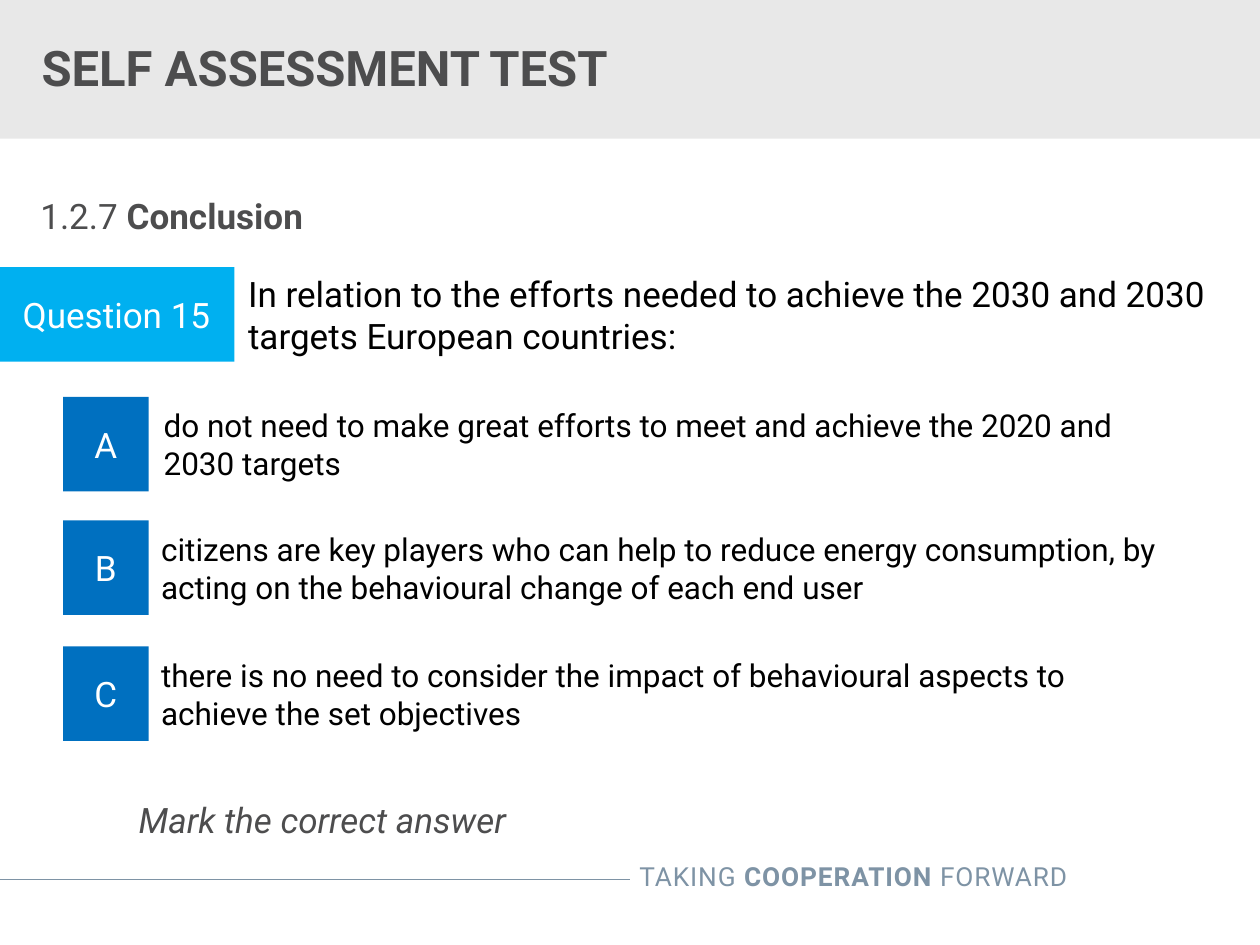
from dataclasses import dataclass

from lxml import etree
from pptx import Presentation
from pptx.dml.color import RGBColor
from pptx.enum.shapes import MSO_CONNECTOR, MSO_SHAPE
from pptx.enum.text import MSO_ANCHOR, MSO_AUTO_SIZE, PP_ALIGN
from pptx.oxml.ns import qn
from pptx.util import Inches, Pt

RECTANGLE = MSO_SHAPE.RECTANGLE
STRAIGHT = MSO_CONNECTOR.STRAIGHT
TOP, MIDDLE = MSO_ANCHOR.TOP, MSO_ANCHOR.MIDDLE
NO_AUTOSIZE = MSO_AUTO_SIZE.NONE
LEFT, CENTER, RIGHT = PP_ALIGN.LEFT, PP_ALIGN.CENTER, PP_ALIGN.RIGHT


@dataclass(frozen=True)
class Theme:
    font: str = "Roboto"
    heading: str = "4D4D4E"
    body: str = "000000"
    on_fill: str = "FFFFFF"
    band: str = "E8E8E8"
    question: str = "00B0F0"
    answer: str = "0070C0"
    slogan: str = "7E93A5"
    title_size: float = 28
    text_size: float = 20
    answer_size: float = 18
    slogan_size: float = 15


@dataclass(frozen=True)
class Box:
    left: float
    top: float
    width: float
    height: float

    def lengths(self) -> tuple:
        return tuple(map(Inches, (self.left, self.top, self.width, self.height)))


@dataclass(frozen=True)
class Run:
    text: str
    bold: bool = False
    italic: bool = False


@dataclass(frozen=True)
class Answer:
    letter: str
    text: str
    top: float
    text_left: float = 1.18


THEME = Theme()
ROW_HEIGHT = 0.75
ANSWERS = (
    Answer("A", "do not need to make great efforts to meet and achieve "
           "the 2020 and 2030 targets", 3.15, 1.2),
    Answer("B", "citizens are key players who can help to reduce energy consumption, "
           "by acting on the behavioural change of each end user", 4.13),
    Answer("C", "there is no need to consider the impact of behavioural aspects "
           "to achieve the set objectives", 5.13),
)


def write(shape, *runs: Run, size: float = THEME.text_size, color: str = THEME.body,
          align=LEFT, anchor=MIDDLE, inset: float | None = None,
          tracking: int | None = None) -> None:
    frame = shape.text_frame
    frame.word_wrap = True
    frame.auto_size = NO_AUTOSIZE
    frame.vertical_anchor = anchor
    if inset is not None:
        frame.margin_left = frame.margin_right = Inches(inset)
        frame.margin_top = frame.margin_bottom = Inches(inset)
    paragraph = frame.paragraphs[0]
    paragraph.alignment = align
    for part in runs:
        run = paragraph.add_run()
        run.text = part.text
        font = run.font
        font.name, font.size = THEME.font, Pt(size)
        font.bold, font.italic = part.bold, part.italic
        font.color.rgb = RGBColor.from_string(color)
        if tracking is not None:
            font._element.set("spc", str(tracking))


def place(placeholder, box: Box, indent: float) -> None:
    placeholder.left, placeholder.top, placeholder.width, placeholder.height = box.lengths()
    properties = placeholder.text_frame.paragraphs[0]._p.get_or_add_pPr()
    properties.set("marL", str(Inches(indent)))
    properties.set("indent", "0")
    etree.SubElement(properties, qn("a:buNone"))
    placeholder.text_frame.paragraphs[0].space_before = Pt(0)


def add_block(slide, box: Box, fill: str, label: str = "") -> None:
    block = slide.shapes.add_shape(RECTANGLE, *box.lengths())
    block.shadow.inherit = False
    block.fill.solid()
    block.fill.fore_color.rgb = RGBColor.from_string(fill)
    block.line.fill.background()
    if label:
        write(block, Run(label), color=THEME.on_fill, align=CENTER)


def add_text(slide, box: Box, *runs: Run, **text_format) -> None:
    write(slide.shapes.add_textbox(*box.lengths()), *runs, **text_format)


def add_rule(slide, left: float, right: float, y: float) -> None:
    rule = slide.shapes.add_connector(
        STRAIGHT, Inches(left), Inches(y), Inches(right), Inches(y))
    rule.line.color.rgb = RGBColor.from_string(THEME.slogan)
    rule.line.width = Pt(0.75)
    etree.SubElement(rule._element.spPr, qn("a:effectLst"))


def add_answer(slide, answer: Answer) -> None:
    add_block(slide, Box(0.5, answer.top, 0.68, ROW_HEIGHT), THEME.answer, answer.letter)
    add_text(slide, Box(answer.text_left, answer.top, 8.15, ROW_HEIGHT),
             Run(answer.text), size=THEME.answer_size)


def main() -> None:
    deck = Presentation()
    deck.slide_width, deck.slide_height = Inches(10), Inches(7.5)
    slide = deck.slides.add_slide(deck.slide_layouts[1])
    title, section = slide.placeholders

    add_rule(slide, -0.01, 5, 6.98)
    add_block(slide, Box(0, 0, 10, 1.1), THEME.band)
    add_text(slide, Box(3.88, 6.78, 4.69, 0.35),
             Run("TAKING "), Run("COOPERATION", bold=True), Run(" FORWARD"),
             size=THEME.slogan_size, color=THEME.slogan, align=RIGHT,
             anchor=TOP, tracking=50)

    place(title, Box(-0.01, 0.16, 7.21, 0.75), indent=0.24)
    write(title, Run("SELF ASSESSMENT TEST", bold=True),
          size=THEME.title_size, color=THEME.heading)
    place(section, Box(0.32, 1.54, 9.36, 0.34), indent=0)
    write(section, Run("1.2.7 "), Run("Conclusion", bold=True),
          color=THEME.heading, anchor=TOP, inset=0)
    for placeholder in (title, section):
        slide.shapes._spTree.append(placeholder._element)

    add_block(slide, Box(-0.01, 2.12, 1.87, ROW_HEIGHT), THEME.question, "Question 15")
    add_text(slide, Box(1.87, 2.12, 8.15, ROW_HEIGHT),
             Run("In relation to the efforts needed to achieve the 2030 and 2030 "
                 "targets European countries:"))
    for answer in ANSWERS:
        add_answer(slide, answer)
    add_text(slide, Box(1.1, 6.34, 8.58, 0.34),
             Run("Mark the correct answer", italic=True),
             color=THEME.heading, anchor=TOP, inset=0)

    deck.save("out.pptx")


if __name__ == "__main__":
    main()
